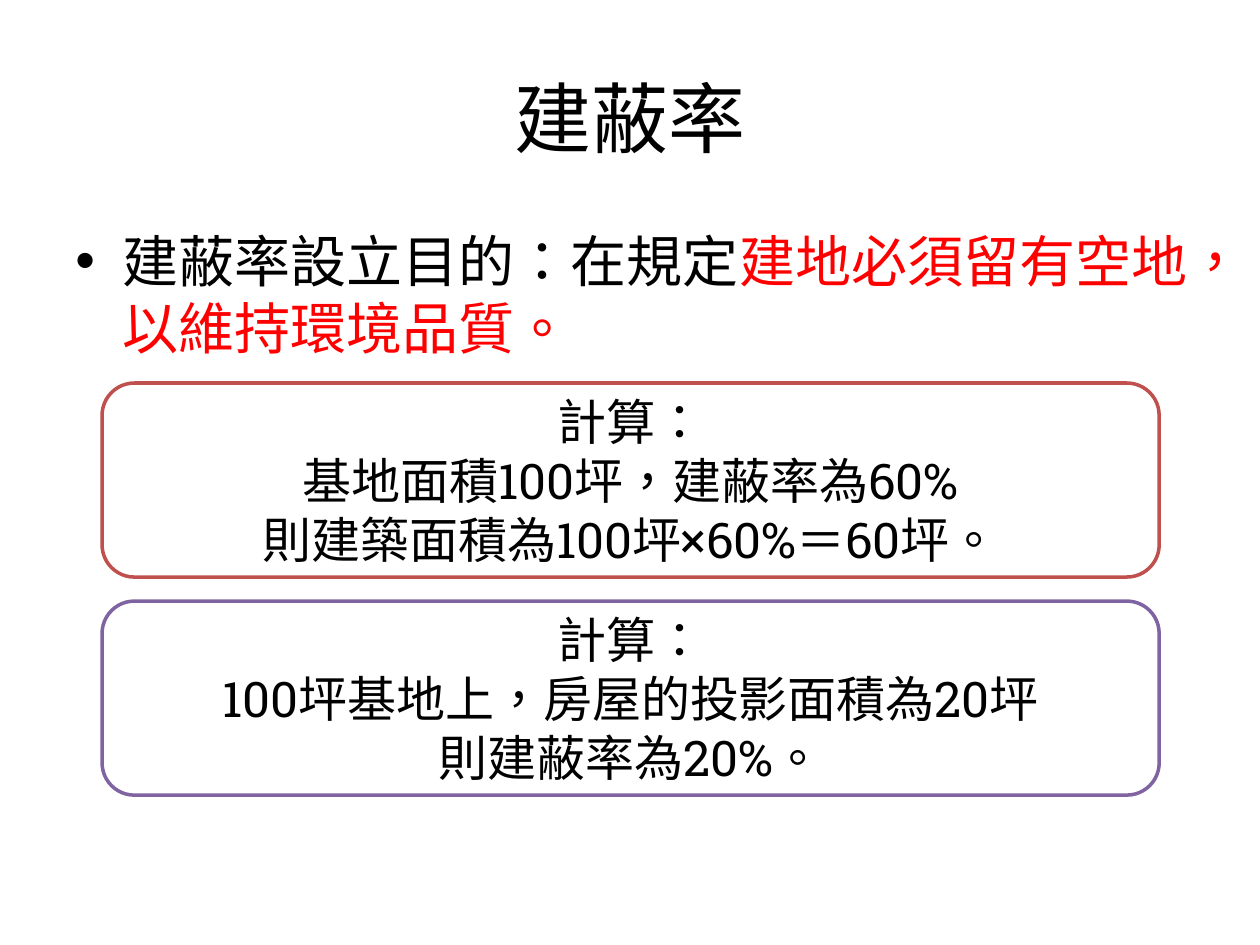
from lxml import etree
from pptx import Presentation
from pptx.dml.color import RGBColor
from pptx.enum.lang import MSO_LANGUAGE_ID
from pptx.enum.shapes import MSO_SHAPE
from pptx.enum.text import MSO_ANCHOR, PP_ALIGN
from pptx.oxml.ns import qn
from pptx.util import Pt

ROUNDED = MSO_SHAPE.ROUNDED_RECTANGLE
MIDDLE = MSO_ANCHOR.MIDDLE
TOP = MSO_ANCHOR.TOP
CENTER = PP_ALIGN.CENTER
LEFT = PP_ALIGN.LEFT
CHINESE = MSO_LANGUAGE_ID.TRADITIONAL_CHINESE
BLACK, WHITE, RED = "000000", "FFFFFF", "FF0000"
CARD_LEFT, CARD_TOP, CARD_WIDTH, CARD_HEIGHT = 58.3, 218.9, 604.1, 110.9
CARD_STEP = 124.6


def color(value):
    return RGBColor.from_string(value)


class SlideWriter:
    font_name = "Roboto Slab"

    def __init__(self, page):
        self.page = page

    def add_span(self, para, text, size, ink=BLACK):
        span = para.add_run()
        span.text = text
        span.font.name = self.font_name
        span.font.size = Pt(size)
        span.font.color.rgb = color(ink)
        span.font.language_id = CHINESE
        east_asian = etree.SubElement(span.font._element, qn("a:ea"))
        east_asian.set("typeface", self.font_name)

    def add_box(self, left, top, width, height, anchor):
        box = self.page.shapes.add_textbox(Pt(left), Pt(top), Pt(width), Pt(height))
        box.text_frame.word_wrap = True
        box.text_frame.vertical_anchor = anchor
        return box.text_frame.paragraphs[0]

    def add_title(self, text):
        para = self.add_box(36, 21.6, 648, 90, MIDDLE)
        para.alignment = CENTER
        self.add_span(para, text, 44)

    def add_bullet(self, spans):
        para = self.add_box(36, 126, 669.6, 356.4, TOP)
        para.alignment = LEFT
        properties = para._p.get_or_add_pPr()
        properties.set("marL", str(Pt(27)))
        properties.set("indent", str(Pt(-27)))
        etree.SubElement(properties, qn("a:buFont")).set("typeface", "Arial")
        etree.SubElement(properties, qn("a:buChar")).set("char", "•")
        for text, ink in spans:
            self.add_span(para, text, 32, ink)

    def add_card(self, top, outline, lines):
        card = self.page.shapes.add_shape(
            ROUNDED, Pt(CARD_LEFT), Pt(top), Pt(CARD_WIDTH), Pt(CARD_HEIGHT))
        card.shadow.inherit = False
        card.fill.solid()
        card.fill.fore_color.rgb = color(WHITE)
        card.line.color.rgb = color(outline)
        card.line.width = Pt(2)
        frame = card.text_frame
        frame.word_wrap = True
        frame.vertical_anchor = MIDDLE
        for index, text in enumerate(lines):
            para = frame.add_paragraph() if index else frame.paragraphs[0]
            para.alignment = CENTER
            self.add_span(para, text, 28)


def main():
    deck = Presentation()
    deck.slide_width, deck.slide_height = Pt(720), Pt(540)
    writer = SlideWriter(deck.slides.add_slide(deck.slide_layouts[6]))
    writer.add_title("建蔽率")
    writer.add_bullet([
        ("建蔽率設立目的：在規定", BLACK),
        ("建地必須留有空地，以維持環境品質。", RED),
    ])
    cards = [
        ("C0504D", ["計算：", "基地面積100坪，建蔽率為60%", "則建築面積為100坪×60%＝60坪。"]),
        ("8064A2", ["計算：", "100坪基地上，房屋的投影面積為20坪", "則建蔽率為20%。"]),
    ]
    for index, (outline, lines) in enumerate(cards):
        writer.add_card(CARD_TOP + index * CARD_STEP, outline, lines)
    deck.save("out.pptx")


if __name__ == "__main__":
    main()
